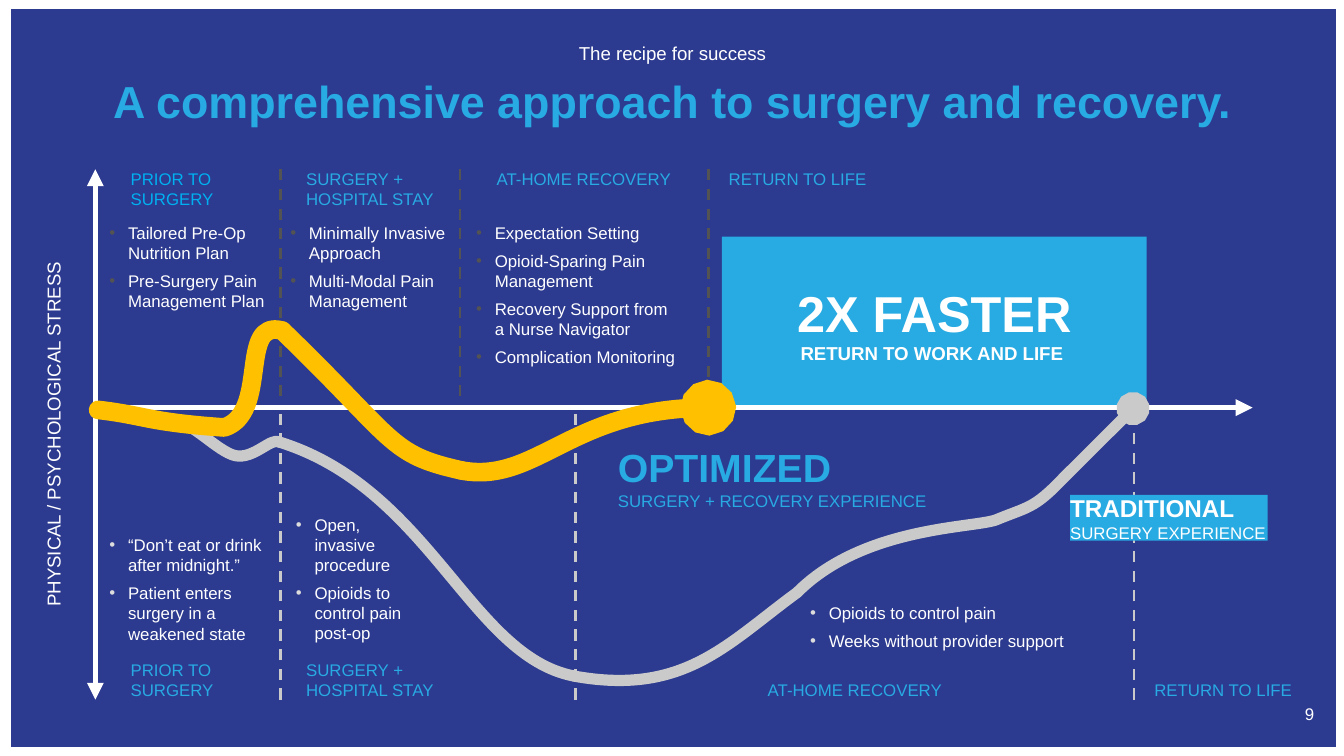
import pptx
import pptx.util
import pptx.dml.color
import pptx.enum.dml
import pptx.enum.shapes
import pptx.enum.text
import pptx.oxml.ns
import lxml.etree

Pt = pptx.util.Pt
rgb = pptx.dml.color.RGBColor.from_string
qn = pptx.oxml.ns.qn
RECT = pptx.enum.shapes.MSO_SHAPE.RECTANGLE
FIT = pptx.enum.text.MSO_AUTO_SIZE.SHAPE_TO_FIT_TEXT
FIXED = pptx.enum.text.MSO_AUTO_SIZE.NONE
ANCHORS = {"t": pptx.enum.text.MSO_ANCHOR.TOP, "m": pptx.enum.text.MSO_ANCHOR.MIDDLE,
           "b": pptx.enum.text.MSO_ANCHOR.BOTTOM}
ALIGNS = {"l": pptx.enum.text.PP_ALIGN.LEFT, "c": pptx.enum.text.PP_ALIGN.CENTER,
          "r": pptx.enum.text.PP_ALIGN.RIGHT}
NAVY, BLUE, WHITE, GRAY, DARK, GOLD = "2C3A8F", "28AAE3", "FFFFFF", "CACACA", "535353", "FFC000"

prs = pptx.Presentation()
prs.slide_width, prs.slide_height = Pt(720), Pt(405)
s = prs.slides.add_slide(prs.slide_layouts[6])


def add_text(at, paras, anchor="t", align="l", wrap=False, inset=0, fill=None, bullet=None, fit=FIT):
    sp = s.shapes.add_textbox(*[Pt(v) for v in at])
    if fill:
        sp.fill.solid()
        sp.fill.fore_color.rgb = rgb(fill)
    tf = sp.text_frame
    settings = {"word_wrap": wrap, "auto_size": fit, "vertical_anchor": ANCHORS[anchor],
                "margin_left": Pt(inset), "margin_right": Pt(inset),
                "margin_top": Pt(inset), "margin_bottom": Pt(inset)}
    for name, value in settings.items():
        setattr(tf, name, value)
    for i, (words, size, bold, color) in enumerate(paras):
        p = tf.paragraphs[0] if i == 0 else tf.add_paragraph()
        p.alignment = ALIGNS[align]
        if bullet:
            if i:
                p.space_before = Pt(4)
            pPr = p._p.get_or_add_pPr()
            pPr.set("marL", str(Pt(10)))
            pPr.set("indent", str(-Pt(10)))
            clr = lxml.etree.SubElement(pPr, qn("a:buClr"))
            lxml.etree.SubElement(clr, qn("a:srgbClr")).set("val", bullet)
            lxml.etree.SubElement(pPr, qn("a:buFont")).set("typeface", "Arial")
            lxml.etree.SubElement(pPr, qn("a:buChar")).set("char", "•")
        r = p.add_run()
        r.text = words
        for name, value in {"name": "Arial", "size": Pt(size), "bold": bold}.items():
            setattr(r.font, name, value)
        r.font.color.rgb = rgb(color)
    return sp


def add_ends(sp, **ends):
    ln = sp.line._get_or_add_ln()
    for tag, kind in ends.items():
        lxml.etree.SubElement(ln, qn("a:" + tag)).set("type", kind)


for at, fill, edge in [((1, 0, 720, 405), NAVY, WHITE), ((386.8, 126.7, 227.5, 92.9), BLUE, None)]:
    sp = s.shapes.add_shape(RECT, *[Pt(v) for v in at])
    sp.shadow.inherit = False
    sp.fill.solid()
    sp.fill.fore_color.rgb = rgb(fill)
    if edge:
        sp.line.color.rgb = rgb(edge)
        sp.line.width = Pt(10)
    else:
        sp.line.fill.background()

add_text((386.8, 146.9, 227.5, 52.6),
         [("2X FASTER", 27, True, WHITE), ("RETURN TO WORK AND LIFE ", 10, True, WHITE)],
         "m", "c", True, 5)
add_text((23.8, 34.6, 672.5, 38.9),
         [("A comprehensive approach to surgery and recovery.", 24, True, BLUE)],
         "t", "c", True, 5, fit=FIXED)
add_text((135.2, 16.6, 450, 23.8), [("The recipe for success", 10, False, WHITE)],
         "m", "c", True, 5, fit=FIXED)
add_text((693.2, 372.8, 15.8, 19.4), [("9", 9, False, WHITE)], "m", "r", False, 5)
sp = add_text((-64.8, 227.3, 186.5, 10.8),
              [("PHYSICAL / PSYCHOLOGICAL STRESS", 10, False, WHITE)], "m", "c")
sp.rotation = 270

AXIS, TOP, BOTTOM = 218.4, 90.7, 374.8
dividers = [(x, BOTTOM, GRAY) for x in (150.1, 308.2, 607.5)]
dividers += [(x, TOP, DARK) for x in (150.1, 246.4, 379.4)]
lines = [(x, y, x, AXIS, color, 1.5, {}) for x, y, color in dividers]
lines += [(51.1, AXIS, 671, AXIS, WHITE, 3, {"tailEnd": "triangle"}),
          (51.1, BOTTOM, 51.1, TOP, WHITE, 3, {"headEnd": "triangle", "tailEnd": "triangle"})]
for x1, y1, x2, y2, color, width, ends in lines:
    sp = s.shapes.add_connector(pptx.enum.shapes.MSO_CONNECTOR.STRAIGHT, Pt(x1), Pt(y1), Pt(x2), Pt(y2))
    sp.line.color.rgb = rgb(color)
    sp.line.width = Pt(width)
    if not ends:
        sp.line.dash_style = pptx.enum.dml.MSO_LINE.DASH
    add_ends(sp, **ends)
    lxml.etree.SubElement(sp._element.spPr, qn("a:effectLst"))

phases = [
    (70, 46.8, "l", ["PRIOR TO", "SURGERY"], "00B0F0", TOP),
    (164, 69.1, "l", ["SURGERY +", "HOSPITAL STAY"], BLUE, TOP),
    (265.5, 94.3, "c", ["AT-HOME RECOVERY"], BLUE, TOP),
    (390.4, 74.9, "l", ["RETURN TO LIFE"], BLUE, TOP),
    (70, 46.8, "l", ["PRIOR TO", "SURGERY"], BLUE, BOTTOM),
    (164, 69.1, "l", ["SURGERY +", "HOSPITAL STAY"], BLUE, BOTTOM),
    (410.7, 94.3, "c", ["AT-HOME RECOVERY"], BLUE, BOTTOM),
    (618.4, 74.9, "l", ["RETURN TO LIFE"], BLUE, BOTTOM),
]
for x, w, align, words, color, edge in phases:
    h = 9.9 * len(words)
    y, anchor = (TOP - 0.2, "t") if edge == TOP else (BOTTOM - h, "b")
    add_text((x, y, w, h), [(t, 9, False, color) for t in words], anchor, align)

notes = [
    ((58.6, 119.4, 85.7, 43.9), "t", DARK,
     ["Tailored Pre-Op Nutrition Plan", "Pre-Surgery Pain Management Plan"]),
    ((155.5, 119.4, 85.7, 43.9), "t", DARK,
     ["Minimally Invasive Approach", "Multi-Modal Pain Management"]),
    ((255.1, 119.4, 108, 72), "t", DARK,
     ["Expectation Setting", "Opioid-Sparing Pain Management",
      "Recovery Support from a Nurse Navigator", "Complication Monitoring"]),
    ((58.6, 290.7, 85.7, 54), "b", "DCDCDC",
     ["“Don’t eat or drink after midnight.”", "Patient enters surgery in a weakened state"]),
    ((158.5, 280.8, 69.1, 63.9), "b", "DCDCDC",
     ["Open, invasive procedure", "Opioids to control pain post-op"]),
    ((434, 324.7, 145.4, 23.8), "b", "DCDCDC",
     ["Opioids to control pain", "Weeks without provider support"]),
]
for at, anchor, color, words in notes:
    add_text(at, [(t, 9, False, WHITE) for t in words], anchor, "l", True, 0, None, color)

add_text((573.3, 265.2, 105.8, 24.5),
         [("TRADITIONAL", 13, True, WHITE), ("SURGERY EXPERIENCE", 9, False, WHITE)], "m", fill=BLUE)
add_text((331, 239.8, 166.3, 33.8),
         [("OPTIMIZED", 21, True, BLUE), ("SURGERY + RECOVERY EXPERIENCE", 9, False, BLUE)], "b")

curves = [
    (GRAY, 6, {}, (51.1, 221), [
        [(65.5, 218.9), (67.7, 223.2), (92.2, 224.6)],
        [(103, 226.1), (116.6, 241.9), (126, 244.1)],
        [(136.1, 246.2), (145.4, 234), (149.8, 236.9)]]),
    (GRAY, 6, {}, (149.8, 236.9), [[(230.4, 262.1), (252, 351.4), (307.4, 362.2)]]),
    (GRAY, 6, {"tailEnd": "oval"}, (307.4, 362.2), [
        [(366.5, 373), (389.5, 344.9), (427, 317.5)],
        [(462.2, 282.2), (520.6, 283), (533.5, 278.6)],
        [(550.8, 271.4), (553.7, 272.9), (569.5, 256.3)],
        [(607, 218.9)]]),
    (GOLD, 10, {}, (52.6, 219.6), [
        [(77.8, 222.5), (78.5, 226.1), (120.2, 229)],
        [(144.7, 221), (127.4, 170.6), (151.2, 177.1)]]),
    (GOLD, 10, {}, (151.2, 177.1), [[(212.4, 236.2), (208.1, 243.4), (247, 252)]]),
    (GOLD, 10, {"tailEnd": "oval"}, (247, 252), [[(285.1, 259.2), (306, AXIS), (379.4, AXIS)]]),
]
for color, width, ends, start, segments in curves:
    fb = s.shapes.build_freeform(Pt(start[0]), Pt(start[1]))
    fb.add_line_segments([(Pt(seg[-1][0]), Pt(seg[-1][1])) for seg in segments], close=False)
    sp = fb.convert_to_shape()
    for step, seg in zip(list(sp._element.iter(qn("a:lnTo"))), segments):
        if len(seg) == 3:
            bend = lxml.etree.Element(qn("a:cubicBezTo"))
            for x, y in seg:
                pt = lxml.etree.SubElement(bend, qn("a:pt"))
                pt.set("x", str(Pt(x) - sp.left))
                pt.set("y", str(Pt(y) - sp.top))
            step.getparent().replace(step, bend)
    sp.shadow.inherit = False
    sp.fill.background()
    sp.line.color.rgb = rgb(color)
    sp.line.width = Pt(width)
    ln = sp.line._get_or_add_ln()
    ln.set("cap", "rnd")
    lxml.etree.SubElement(ln, qn("a:round"))
    add_ends(sp, **ends)

prs.save("out.pptx")
